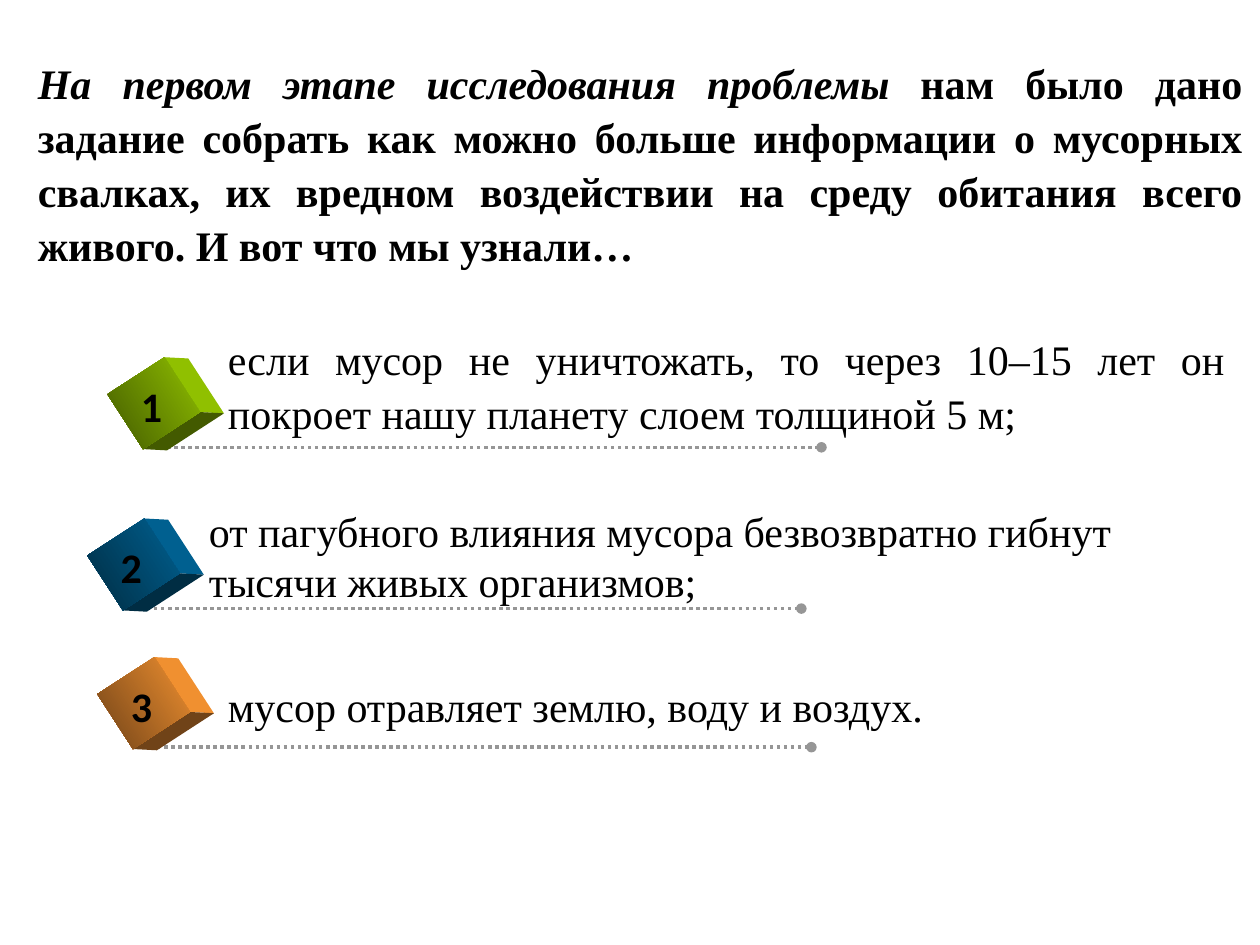
from dataclasses import dataclass
from math import cos, radians, sin

from lxml import etree
from pptx import Presentation
from pptx import util as u
from pptx.dml.color import RGBColor
from pptx.enum import dml, shapes, text
from pptx.oxml.ns import qn

SERIF = "Times New Roman"
TILT = 57
FACE_WIDTH, FACE_HEIGHT = 0.52, 0.54
DEPTH = (0.19, 0.01)


@dataclass
class Item:
    number: str
    center: tuple[float, float]
    bright: str
    dark: str
    text_box: tuple[float, float, float, float]
    lines: list[str]
    justified: bool = False


ITEMS = [
    Item("1", (1.22, 3.2), "90C000", "435A00", (1.71, 2.57, 8.11, 0.97),
         ["если мусор не уничтожать, то через 10–15 лет он покроет нашу планету слоем толщиной 5 м;"],
         justified=True),
    Item("2", (1.06, 4.48), "006090", "002D43", (1.56, 3.96, 7.52, 0.91),
         ["от пагубного влияния мусора безвозвратно гибнут", "тысячи живых организмов;"]),
    Item("3", (1.14, 5.58), "F09030", "704318", (1.71, 5.35, 5.81, 0.51),
         ["мусор отравляет землю, воду и воздух."]),
]


def color(value: str) -> RGBColor:
    return RGBColor.from_string(value)


def add_span(para, content: str, font=SERIF, bold=False, italic=False) -> None:
    span = para.add_run()
    span.text = content
    span.font.name = font
    span.font.size = u.Pt(24)
    span.font.bold = bold
    span.font.italic = italic
    span.font.color.rgb = color("000000")


def justify(para) -> None:
    para.alignment = text.PP_ALIGN.JUSTIFY
    para.line_spacing = 1.07


def add_text(page, place, lines, font=SERIF, bold=False, justified=False) -> None:
    box = page.shapes.add_textbox(*map(u.Inches, place))
    frame = box.text_frame
    frame.word_wrap = justified
    frame.auto_size = text.MSO_AUTO_SIZE.SHAPE_TO_FIT_TEXT
    for index, line in enumerate(lines):
        para = frame.add_paragraph() if index else frame.paragraphs[0]
        if justified:
            justify(para)
        add_span(para, line, font=font, bold=bold)


def add_dotted_line(page, left: float, top: float, length: float) -> None:
    line = page.shapes.add_connector(
        shapes.MSO_CONNECTOR.STRAIGHT,
        *map(u.Inches, (left, top, left + length, top)))
    line.line.color.rgb = color("969696")
    line.line.width = u.Pt(2)
    line.line.dash_style = dml.MSO_LINE.ROUND_DOT
    etree.SubElement(line.line._get_or_add_ln(), qn("a:tailEnd"), type="oval")
    etree.SubElement(line._element.spPr, qn("a:effectLst"))


def add_polygon(page, points, fill: str) -> None:
    builder = page.shapes.build_freeform(
        *(u.Inches(value) for value in points[0]))
    builder.add_line_segments(
        [(u.Inches(x), u.Inches(y)) for x, y in points[1:]], close=True)
    polygon = builder.convert_to_shape()
    polygon.shadow.inherit = False
    polygon.fill.solid()
    polygon.fill.fore_color.rgb = color(fill)
    polygon.line.fill.background()


def add_cube(page, center, bright: str, dark: str) -> None:
    """Draw a tilted front face with two side faces that give it depth."""
    x, y = center
    angle = radians(TILT)

    def corner(across: int, down: int) -> tuple[float, float]:
        dx, dy = across * FACE_WIDTH / 2, down * FACE_HEIGHT / 2
        return (x + dx * cos(angle) - dy * sin(angle),
                y + dx * sin(angle) + dy * cos(angle))

    def pushed(point) -> tuple[float, float]:
        return point[0] + DEPTH[0], point[1] + DEPTH[1]

    top, right, bottom = corner(-1, -1), corner(1, -1), corner(1, 1)
    for start, end, fill in ((top, right, bright), (right, bottom, dark)):
        add_polygon(page, [start, pushed(start), pushed(end), end], fill)

    face = page.shapes.add_shape(
        shapes.MSO_SHAPE.RECTANGLE,
        *map(u.Inches, (x - FACE_WIDTH / 2, y - FACE_HEIGHT / 2,
                        FACE_WIDTH, FACE_HEIGHT)))
    face.rotation = TILT
    face.shadow.inherit = False
    face.line.fill.background()
    face.fill.gradient()
    face.fill.gradient_angle = 270
    for stop, shade in zip(face.fill.gradient_stops, (bright, dark)):
        stop.color.rgb = color(shade)


def add_item(page, item: Item) -> None:
    x, y = item.center
    add_dotted_line(page, x + 0.05, y + 0.35, 5.25)
    add_cube(page, item.center, item.bright, item.dark)
    add_text(page, (x - 0.2, y - 0.23, 0.37, 0.51), [item.number],
             font="Calibri", bold=True)
    add_text(page, item.text_box, item.lines, justified=item.justified)


def add_title(page) -> None:
    title = page.shapes.title
    title.left, title.top, title.width, title.height = map(
        u.Inches, (0.2, 0.74, 9.76, 1.09))
    frame = title.text_frame
    frame.word_wrap = True
    frame.auto_size = text.MSO_AUTO_SIZE.NONE
    frame.vertical_anchor = text.MSO_ANCHOR.MIDDLE
    para = frame.paragraphs[0]
    justify(para)
    add_span(para, "На первом этапе исследования проблемы", bold=True, italic=True)
    add_span(para, " нам было дано задание собрать как можно больше информации "
                   "о мусорных свалках, их вредном воздействии на среду обитания "
                   "всего живого. И вот что мы узнали…", bold=True)


def main() -> None:
    deck = Presentation()
    deck.slide_width, deck.slide_height = u.Inches(10), u.Inches(7.5)
    page = deck.slides.add_slide(deck.slide_layouts[5])
    add_title(page)
    for item in ITEMS:
        add_item(page, item)
    deck.save("out.pptx")


if __name__ == "__main__":
    main()
